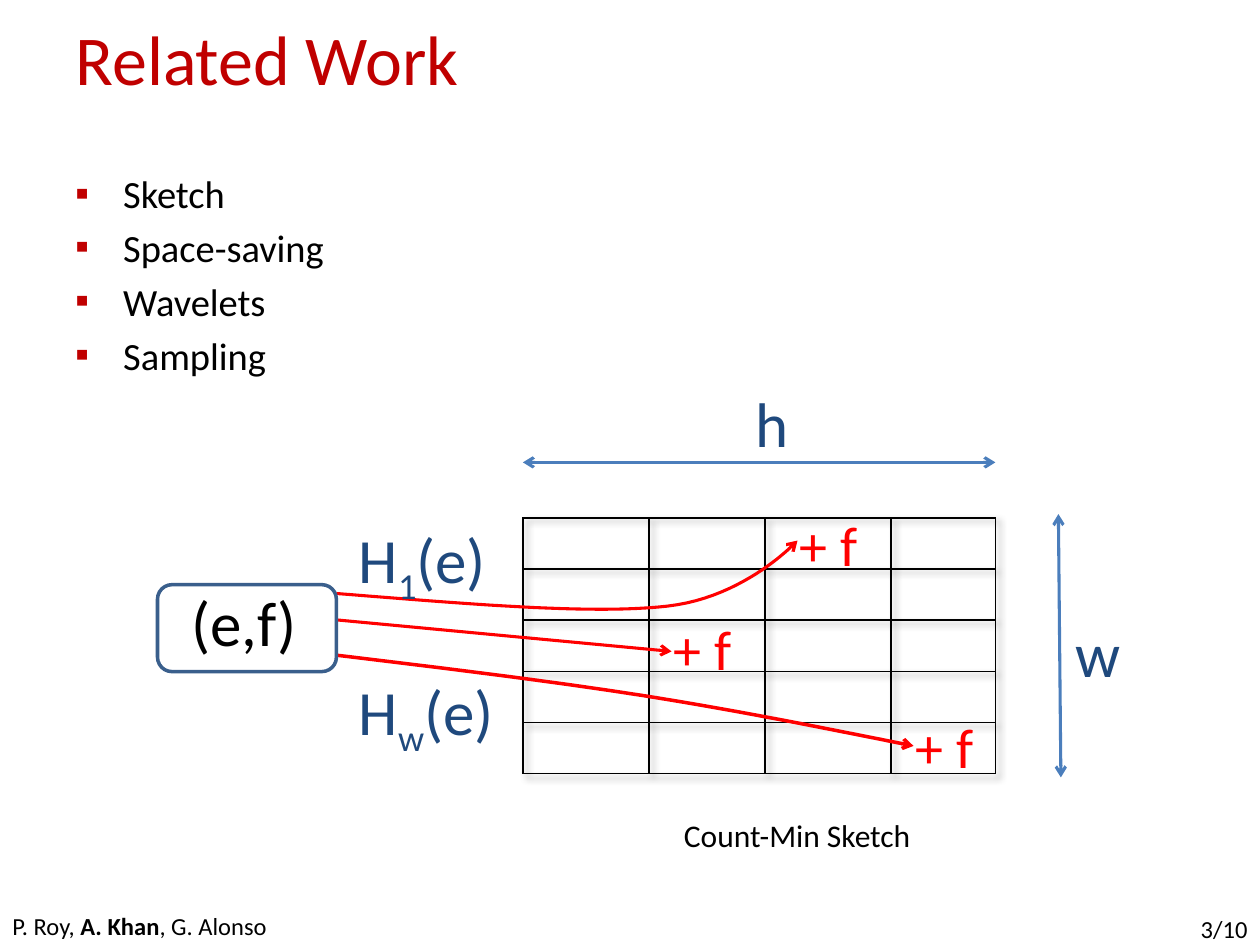
from dataclasses import dataclass

from lxml.etree import SubElement
from pptx import Presentation
from pptx.dml.color import RGBColor
from pptx.enum.shapes import MSO_CONNECTOR, MSO_SHAPE
from pptx.enum.text import MSO_ANCHOR, MSO_AUTO_SIZE, PP_ALIGN
from pptx.oxml import parse_xml
from pptx.oxml.ns import nsdecls, qn
from pptx.util import Inches, Pt


@dataclass(frozen=True)
class Theme:
    font: str = "Calibri"
    black: str = "000000"
    title: str = "C00000"
    navy: str = "1F497D"
    blue: str = "4B7EBC"
    outline: str = "3A5F8C"
    red: str = "FF0000"
    title_size: int = 40
    label_size: int = 36
    update_size: int = 32
    body_size: int = 22
    caption_size: int = 18
    footer_size: int = 14


T = Theme()

# Content
TITLE = "Related Work"
BULLETS = ["Sketch", "Space-saving", "Wavelets", "Sampling"]
GRID_LEFT, GRID_TOP, ROW_H, ROWS = 4.15, 4.11, 0.406, 5
COLS = [1, 0.92, 1, 0.83]
GRID_RIGHT = GRID_LEFT + sum(COLS)

# Labels: runs of (text, style), box, size, colour
LABELS = [
    ([("h", "")], (5.9, 3, 0.47, 0.71), T.label_size, T.navy),
    ([("w", "")], (8.44, 4.83, 0.56, 0.71), T.label_size, T.navy),
    ([("(e,f)", "")], (1.42, 4.58, 1.16, 0.71), T.label_size, T.black),
    ([("H", ""), ("1", "sub"), ("(e)", "")], (2.75, 4.08, 1.36, 0.71), T.label_size, T.navy),
    ([("H", ""), ("w", "sub"), ("(e)", "")], (2.75, 5.29, 1.43, 0.71), T.label_size, T.navy),
    ([("Count-Min Sketch", "")], (5.33, 6.43, 2.03, 0.4), T.caption_size, T.black),
] + [([("+ f", "")], (x, y, 0.74, 0.64), T.update_size, T.red)
     for x, y in [(6.25, 4), (5.25, 4.83), (7.17, 5.61)]]

AUTHORS = [("P. Roy, ", ""), ("A. Khan", "bold"), (", G. Alonso", "")]
PAGE = [("3/10", "")]

# Hash arrows: line width and cubic Bézier control points
CURVES = [
    (1.75, [(2.67, 4.71), (3.68, 4.79), (4.69, 4.88), (5.3, 4.81),
            (5.92, 4.74), (6.33, 4.29), (6.33, 4.29)]),
    (2, [(2.67, 5.2), (3.5, 5.3), (4.33, 5.4), (5.1, 5.52),
         (5.86, 5.64), (6.55, 5.78), (7.25, 5.92)]),
]
DIMENSIONS = [((GRID_LEFT, 3.67), (GRID_RIGHT, 3.67)), ((8.4, 4.08), (8.42, 6.17))]


def inches(values):
    return [Inches(v) for v in values]


def style(font, size, color):
    font.name, font.size = T.font, Pt(size)
    font.color.rgb = RGBColor.from_string(color)


def add_text(slide, runs, box, size, color, wrap=False, align=PP_ALIGN.LEFT):
    tf = slide.shapes.add_textbox(*inches(box)).text_frame
    tf.word_wrap = wrap
    tf.auto_size = MSO_AUTO_SIZE.NONE if wrap else MSO_AUTO_SIZE.SHAPE_TO_FIT_TEXT
    p = tf.paragraphs[0]
    p.alignment = align
    style(p.font, size, color)
    for text, kind in runs:
        r = p.add_run()
        r.text = text
        style(r.font, size, color)
        if kind == "bold":
            r.font.bold = True
        elif kind == "sub":
            r._r.get_or_add_rPr().set("baseline", "-25000")
    return tf


def format_line(sp, color, width, ends):
    sp.line.color.rgb = RGBColor.from_string(color)
    sp.line.width = Pt(width)
    for end in ends:
        SubElement(sp.line._get_or_add_ln(), qn(f"a:{end}"), type="arrow")


def add_arrow(slide, start, end, color, width, ends):
    line = slide.shapes.add_connector(MSO_CONNECTOR.STRAIGHT, *inches(start + end))
    format_line(line, color, width, ends)
    SubElement(line._element.spPr, qn("a:effectLst"))


def bezier(points, steps=24):
    for i in range(0, len(points) - 1, 3):
        for k in range(1, steps + 1):
            t = k / steps
            weights = ((1 - t) ** 3, 3 * t * (1 - t) ** 2, 3 * t * t * (1 - t), t ** 3)
            yield tuple(sum(w * pt[axis] for w, pt in zip(weights, points[i:i + 4]))
                        for axis in (0, 1))


def add_curve(slide, points, width):
    # Vertices are whole EMU, since the builder rounds to integers
    builder = slide.shapes.build_freeform(*inches(points[0]))
    builder.add_line_segments([inches(pt) for pt in bezier(points)], close=False)
    sp = builder.convert_to_shape()
    sp.fill.background()
    sp.shadow.inherit = False
    format_line(sp, T.red, width, ["tailEnd"])


def add_grid(slide):
    box = (GRID_LEFT, GRID_TOP, sum(COLS), ROW_H * ROWS)
    table = slide.shapes.add_table(ROWS, len(COLS), *inches(box)).table
    table.first_row = table.horz_banding = False
    for column, width in zip(table.columns, COLS):
        column.width = Inches(width)
    for row in table.rows:
        row.height = Inches(ROW_H)
    for cell in table.iter_cells():
        cell.fill.background()
        tcPr = cell._tc.get_or_add_tcPr()
        for i, side in enumerate("LRTB"):
            tcPr.insert(i, parse_xml(
                f'<a:ln{side} {nsdecls("a")} w="12700"><a:solidFill>'
                f'<a:srgbClr val="{T.black}"/></a:solidFill></a:ln{side}>'))
    # Soft shadow behind the grid
    table._tbl.tblPr.insert(0, parse_xml(
        f'<a:effectLst {nsdecls("a")}><a:outerShdw blurRad="50800" dist="38100" '
        f'dir="2700000" algn="tl" rotWithShape="0"><a:srgbClr val="{T.black}">'
        '<a:alpha val="40000"/></a:srgbClr></a:outerShdw></a:effectLst>'))


def add_bullets(slide):
    tf = slide.shapes.add_textbox(*inches((0.5, 1.3, 9, 4.95))).text_frame
    tf.word_wrap = True
    for i, text in enumerate(BULLETS):
        p = tf.paragraphs[0] if i == 0 else tf.add_paragraph()
        p.text = text
        p.space_before = Pt(0.2 * T.body_size)
        style(p.font, T.body_size, T.black)
        pPr = p._p.get_or_add_pPr()
        pPr.set("marL", str(Inches(0.38)))
        pPr.set("indent", str(-Inches(0.38)))
        bullet = [f'<a:buClr {nsdecls("a")}><a:srgbClr val="{T.title}"/></a:buClr>',
                  f'<a:buFont {nsdecls("a")} typeface="{T.font}"/>',
                  f'<a:buChar {nsdecls("a")} char="▪"/>']
        for xml in bullet:
            pPr.insert_element_before(parse_xml(xml), "a:tabLst", "a:defRPr")


def main():
    prs = Presentation()
    prs.slide_width, prs.slide_height = inches((10, 7.5))
    slide = prs.slides.add_slide(prs.slide_layouts[5])

    # Title and bullets
    title = slide.shapes.title
    title.left, title.top, title.width, title.height = inches((0.5, 0, 9, 0.92))
    title.text_frame.text = TITLE
    title.text_frame.vertical_anchor = MSO_ANCHOR.MIDDLE
    p = title.text_frame.paragraphs[0]
    p.alignment = PP_ALIGN.LEFT
    style(p.font, T.title_size, T.title)
    add_bullets(slide)

    # Sketch grid with its dimensions
    add_grid(slide)
    for start, end in DIMENSIONS:
        add_arrow(slide, start, end, T.blue, 1.75, ["headEnd", "tailEnd"])

    # Hash arrows
    for width, points in CURVES:
        add_curve(slide, points, width)
    add_arrow(slide, (2.67, 4.92), (5.33, 5.17), T.red, 1.75, ["tailEnd"])

    # Item box and labels
    item = slide.shapes.add_shape(MSO_SHAPE.ROUNDED_RECTANGLE,
                                  *inches((1.25, 4.64, 1.42, 0.69)))
    item.fill.background()
    item.shadow.inherit = False
    format_line(item, T.outline, 2, [])
    for runs, box, size, color in LABELS:
        add_text(slide, runs, box, size, color)

    # Footer
    add_text(slide, AUTHORS, (0, 7.18, 4.92, 0.4), T.footer_size, T.black, wrap=True)
    page = add_text(slide, PAGE, (7.67, 7.17, 2.33, 0.4), T.footer_size, T.black,
                    wrap=True, align=PP_ALIGN.RIGHT)
    page.vertical_anchor = MSO_ANCHOR.MIDDLE

    prs.save("out.pptx")


if __name__ == "__main__":
    main()
